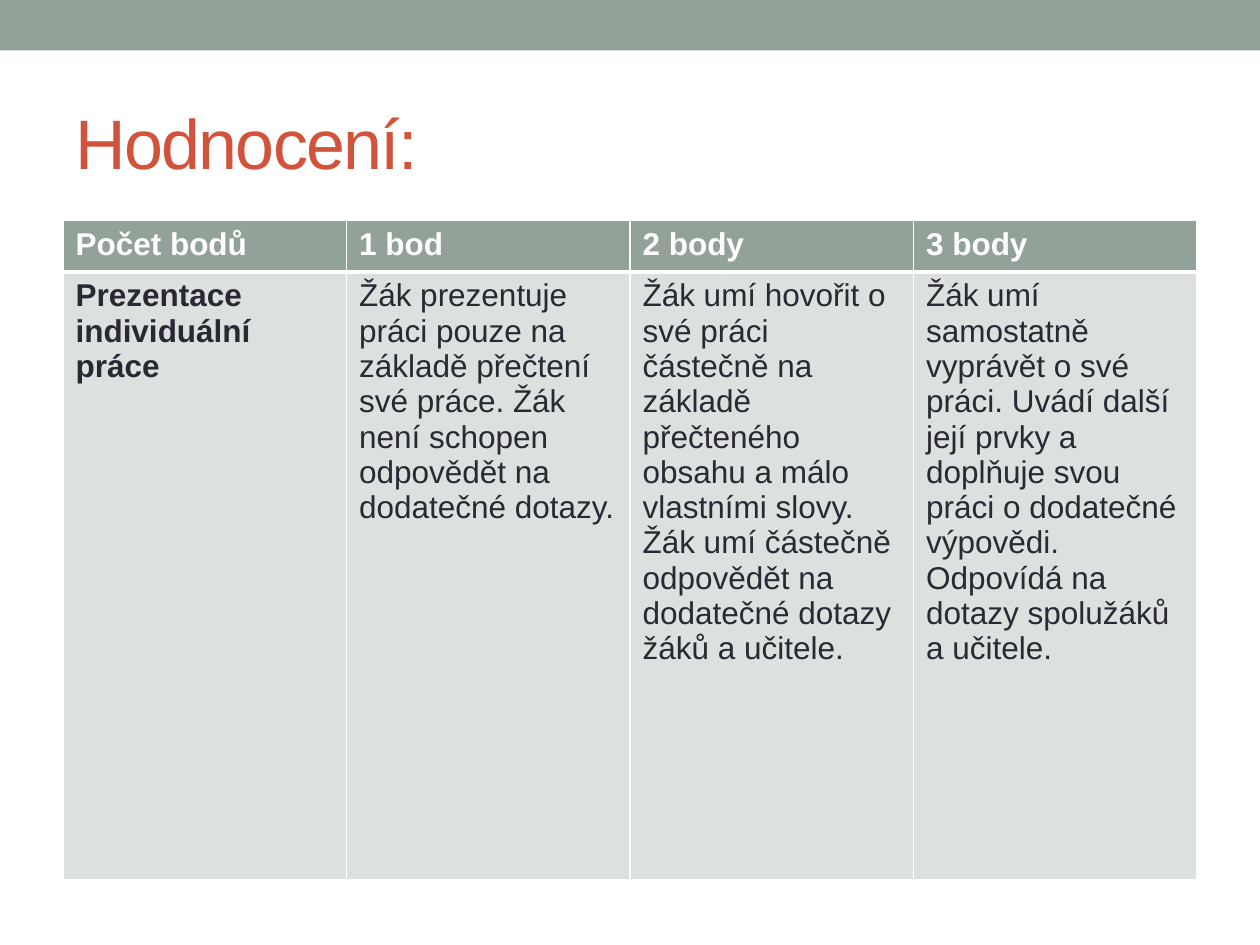
import lxml.etree
import pptx
import pptx.dml.color
import pptx.enum.shapes
import pptx.enum.text
import pptx.oxml.ns
import pptx.util

Pt = pptx.util.Pt
SAGE, PALE, WHITE, INK, RUST = "93A299", "DCE0DE", "FFFFFF", "292934", "D2533C"
ROWS = [
    ["Počet bodů", "1 bod", "2 body", "3 body"],
    [
        "Prezentace individuální práce",
        "Žák prezentuje práci pouze na základě přečtení své práce. "
        "Žák není schopen odpovědět na dodatečné dotazy.",
        "Žák umí hovořit o své práci částečně na základě přečteného obsahu "
        "a málo vlastními slovy. Žák umí částečně odpovědět na dodatečné "
        "dotazy žáků a učitele.",
        "Žák umí samostatně vyprávět o své práci. Uvádí další její prvky "
        "a doplňuje svou práci o dodatečné výpovědi. Odpovídá na dotazy "
        "spolužáků a učitele.",
    ],
]


def color(value):
    return pptx.dml.color.RGBColor.from_string(value)


def write(frame, text, size=18, ink=INK, bold=False, spacing=0):
    """Put one left-aligned paragraph into a text frame."""
    para = frame.paragraphs[0]
    para.alignment = pptx.enum.text.PP_ALIGN.LEFT
    span = para.add_run()
    span.text = text
    span.font.name = "Arial"
    span.font.size = Pt(size)
    span.font.bold = bold
    span.font.color.rgb = color(ink)
    if spacing:
        span._r.get_or_add_rPr().set("spc", str(int(spacing * 100)))


deck = pptx.Presentation()
deck.slide_width, deck.slide_height = Pt(720), Pt(540)
page = deck.slides.add_slide(deck.slide_layouts[5])
page.background.fill.solid()
page.background.fill.fore_color.rgb = color(WHITE)

# Top band
band = page.shapes.add_shape(
    pptx.enum.shapes.MSO_SHAPE.RECTANGLE, 0, 0, Pt(720), Pt(28.8))
band.shadow.inherit = False
band.fill.solid()
band.fill.fore_color.rgb = color(SAGE)
band.line.fill.background()

# Title
title = page.shapes.title
title.left, title.top, title.width, title.height = Pt(36), Pt(42), Pt(648), Pt(78)
title.text_frame.vertical_anchor = pptx.enum.text.MSO_ANCHOR.MIDDLE
write(title.text_frame, "Hodnocení:", size=40, ink=RUST, spacing=-1)

# Grading table
table = page.shapes.add_table(
    2, 4, Pt(36), Pt(126), Pt(648), Pt(376.5)).table
for row, height in zip(table.rows, (29.5, 347)):
    row.height = Pt(height)

for r, texts in enumerate(ROWS):
    header = r == 0
    for c, text in enumerate(texts):
        cell = table.cell(r, c)
        write(cell.text_frame, text, ink=WHITE if header else INK,
              bold=header or c == 0)
        props = cell._tc.get_or_add_tcPr()
        widths = {"lnL": 1, "lnR": 1, "lnT": 1 if header else 3,
                  "lnB": 3 if header else 1}
        for side, width in widths.items():
            border = lxml.etree.SubElement(
                props, pptx.oxml.ns.qn(f"a:{side}"), w=str(Pt(width)))
            fill = lxml.etree.SubElement(border, pptx.oxml.ns.qn("a:solidFill"))
            lxml.etree.SubElement(fill, pptx.oxml.ns.qn("a:srgbClr"), val=WHITE)
        cell.fill.solid()
        cell.fill.fore_color.rgb = color(SAGE if header else PALE)

deck.save("out.pptx")
